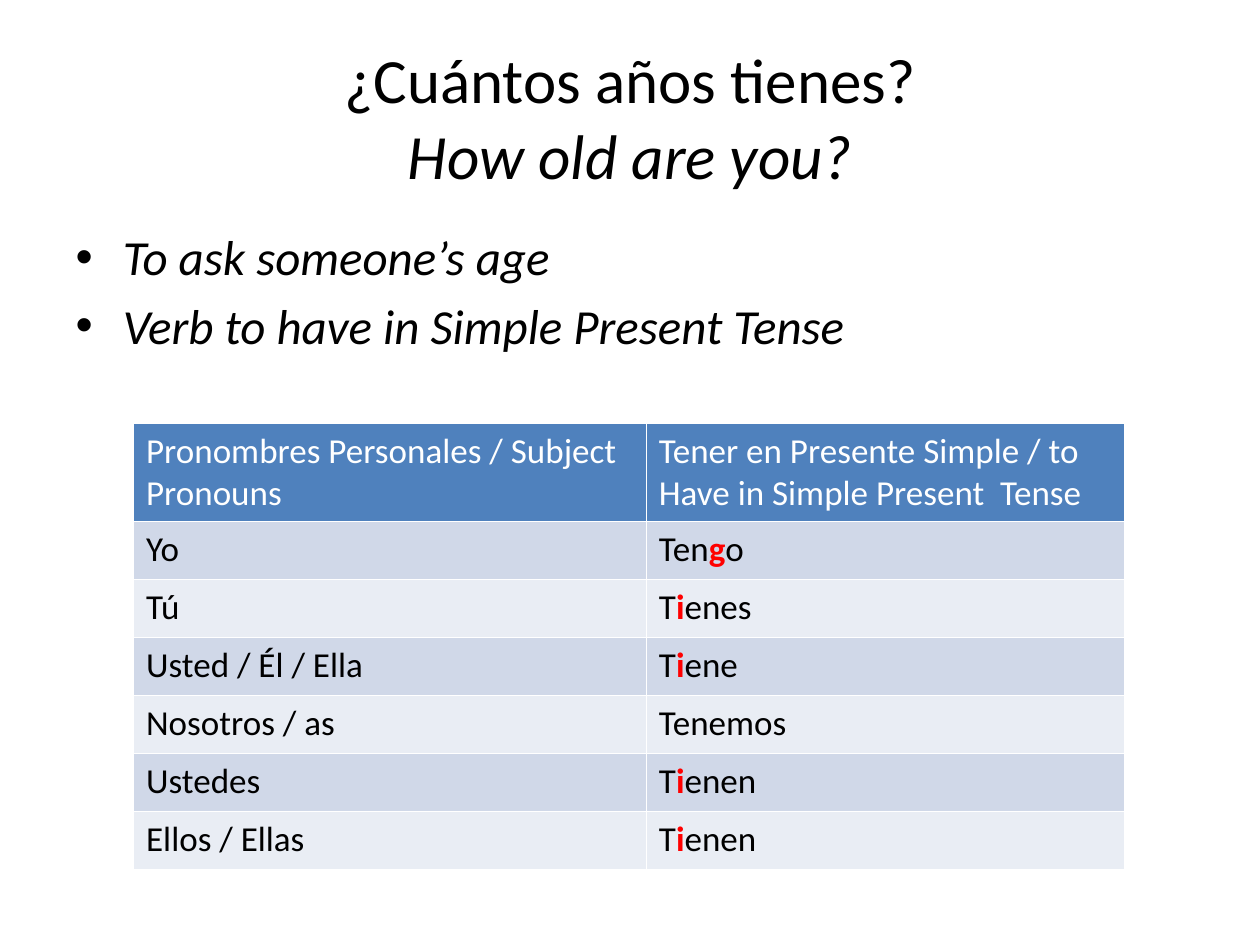
from pptx import Presentation
from pptx.dml.color import RGBColor
from pptx.enum.text import MSO_ANCHOR as Anchor, MSO_AUTO_SIZE as AutoSize, PP_ALIGN as Align
from pptx.util import Inches, Pt

BLACK = RGBColor(0x00, 0x00, 0x00)
WHITE = RGBColor(0xFF, 0xFF, 0xFF)
RED = RGBColor(0xFF, 0x00, 0x00)
HEADER = RGBColor(0x4F, 0x81, 0xBD)
BANDS = (RGBColor(0xD0, 0xD8, 0xE8), RGBColor(0xE9, 0xED, 0xF4))

HEADINGS = (
    "Pronombres Personales / Subject Pronouns",
    "Tener en Presente Simple / to Have in Simple Present  Tense",
)
CONJUGATION = [
    ("Yo", "Ten*g*o"),
    ("Tú", "T*i*enes"),
    ("Usted / Él / Ella", "T*i*ene"),
    ("Nosotros / as", "Tenemos"),
    ("Ustedes", "T*i*enen"),
    ("Ellos / Ellas", "T*i*enen"),
]


class Lesson:
    """Hold the lesson's text style and its current slide."""

    font = "Calibri"

    def __init__(self, prs):
        self.s = prs.slides.add_slide(prs.slide_layouts[1])

    def run(self, p, text, size, color=BLACK, bold=False, italic=False):
        r = p.add_run()
        r.text = text
        r.font.name = self.font
        r.font.size = Pt(size)
        r.font.color.rgb = color
        r.font.bold = bold
        r.font.italic = italic

    def place(self, sp, left, top, width, height):
        sp.left, sp.top = Inches(left), Inches(top)
        sp.width, sp.height = Inches(width), Inches(height)
        sp.text_frame.auto_size = AutoSize.NONE
        return sp.text_frame

    def title(self, question, translation):
        tf = self.place(self.s.shapes.title, 0.5, 0.3, 9, 1.25)
        tf.vertical_anchor = Anchor.MIDDLE
        p = tf.paragraphs[0]
        p.alignment = Align.CENTER
        self.run(p, question, 36)
        p.add_line_break()
        self.run(p, translation, 36, italic=True)

    def bullets(self, items):
        tf = self.place(self.s.placeholders[1], 0.5, 1.75, 9, 5.54)
        for i, item in enumerate(items):
            p = tf.add_paragraph() if i else tf.paragraphs[0]
            self.run(p, item, 28, italic=True)

    def cell(self, cell, marked, fill, color):
        cell.fill.solid()
        cell.fill.fore_color.rgb = fill
        p = cell.text_frame.paragraphs[0]
        for i, part in enumerate(marked.split("*")):
            stressed = i % 2 == 1
            self.run(p, part, 20, RED if stressed else color, bold=stressed)

    def table(self, headings, rows):
        count = len(rows) + 1
        frame = self.s.shapes.add_table(
            count, len(headings), Inches(1.06), Inches(3.36), Inches(7.87), Inches(0.46 * count)
        )
        table = frame.table
        for column, width in zip(table.columns, (4.07, 3.8)):
            column.width = Inches(width)
        for i, texts in enumerate([headings, *rows]):
            fill, color = (BANDS[(i - 1) % 2], BLACK) if i else (HEADER, WHITE)
            for j, text in enumerate(texts):
                self.cell(table.cell(i, j), text, fill, color)


def main():
    prs = Presentation()
    prs.slide_width, prs.slide_height = Inches(10), Inches(7.5)
    lesson = Lesson(prs)
    lesson.title("¿Cuántos años tienes?", "How old are you?")
    lesson.bullets(["To ask someone’s age", "Verb to have in Simple Present Tense"])
    lesson.table(HEADINGS, CONJUGATION)
    prs.save("out.pptx")


if __name__ == "__main__":
    main()
